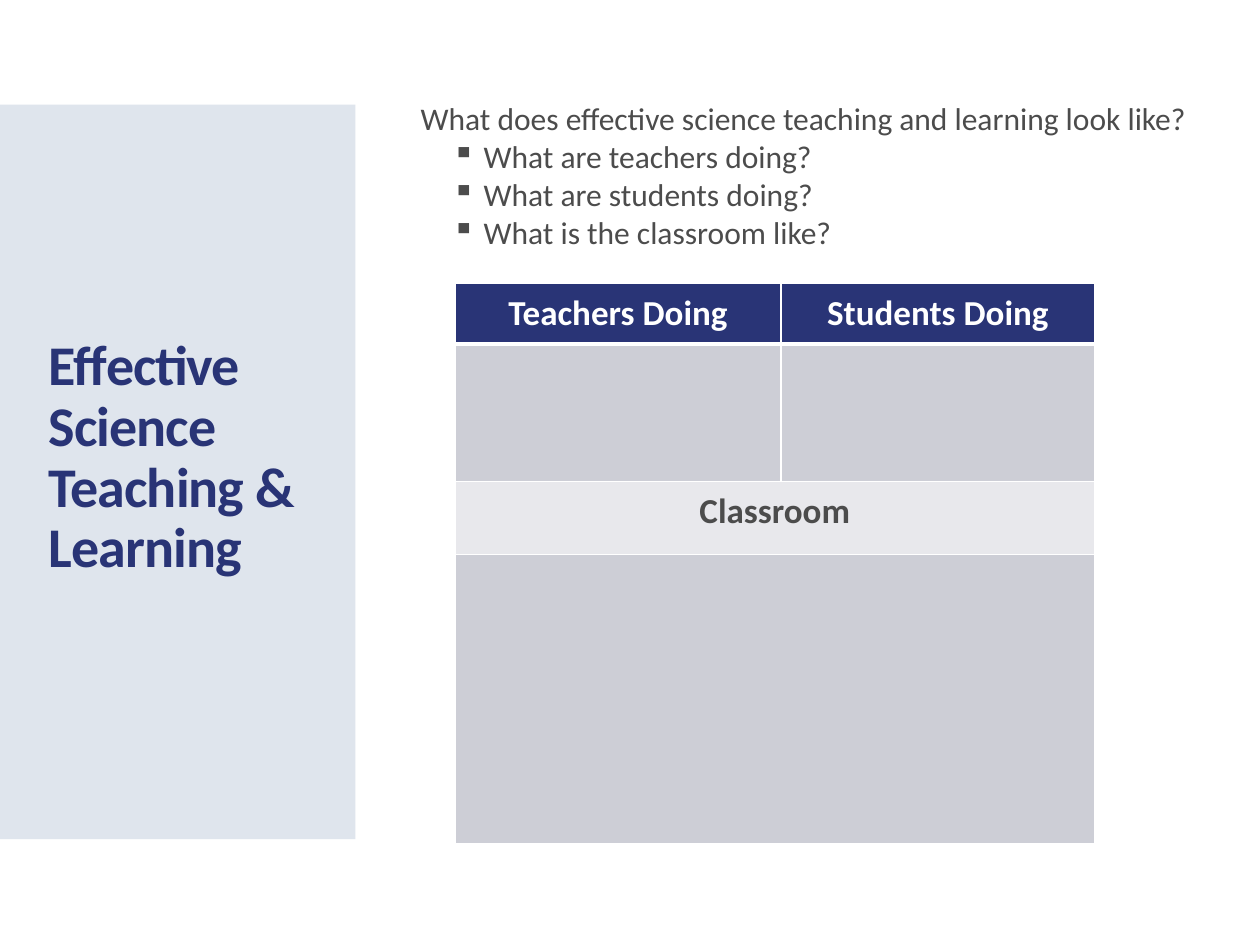
import pptx
import pptx.dml.color
import pptx.enum.shapes
import pptx.enum.text
import pptx.oxml
import pptx.oxml.ns
import pptx.util
from dataclasses import dataclass
from lxml import etree

Inches = pptx.util.Inches
Pt = pptx.util.Pt


@dataclass(frozen=True)
class Theme:
    font: str = "Calibri"
    navy: str = "293476"
    panel: str = "DFE5ED"
    dark_band: str = "CDCED6"
    light_band: str = "E8E8EC"
    ink: str = "4C4C4C"
    white: str = "FFFFFF"
    title_size: int = 32
    heading_size: int = 20
    body_size: int = 18


THEME = Theme()


def rgb(value):
    return pptx.dml.color.RGBColor.from_string(value)


def add_child(parent, tag, **attributes):
    return etree.SubElement(parent, pptx.oxml.ns.qn(tag), **attributes)


def format_runs(paragraph, size, color, bold=False):
    for run in paragraph.runs:
        run.font.name = THEME.font
        run.font.size = Pt(size)
        run.font.bold = bold
        run.font.color.rgb = rgb(color)


def add_title_panel(slide, left, top, width, height):
    panel = slide.shapes.add_shape(
        pptx.enum.shapes.MSO_SHAPE.RECTANGLE,
        Inches(left), Inches(top), Inches(width), Inches(height))
    panel.shadow.inherit = False
    panel.fill.solid()
    panel.fill.fore_color.rgb = rgb(THEME.panel)
    panel.line.fill.background()

    title = slide.shapes.add_textbox(
        Inches(left + 0.29), Inches(top + 1.42), Inches(width - 0.49), Inches(2.4))
    frame = title.text_frame
    frame.word_wrap = True
    frame.vertical_anchor = pptx.enum.text.MSO_ANCHOR.BOTTOM
    frame.text = "Effective Science Teaching & Learning"
    heading = frame.paragraphs[0]
    heading.line_spacing = 0.9
    format_runs(heading, THEME.title_size, THEME.navy, bold=True)
    for run in heading.runs:
        run.font._element.set("spc", "-60")


def add_questions(slide, left, top, width, height):
    box = slide.shapes.add_textbox(
        Inches(left), Inches(top), Inches(width), Inches(height))
    frame = box.text_frame
    frame.word_wrap = True
    frame.text = "\n".join([
        "What does effective science teaching and learning look like?",
        "What are teachers doing?",
        "What are students doing?",
        "What is the classroom like?",
    ])
    for question in frame.paragraphs[1:]:
        question.level = 1
        properties = question._p.get_or_add_pPr()
        properties.set("marL", str(Inches(0.5)))
        properties.set("indent", str(-Inches(0.25)))
        add_child(properties, "a:buChar", char="▪")
    for paragraph in frame.paragraphs:
        format_runs(paragraph, THEME.body_size, THEME.ink)


def set_borders(cell, bottom_width):
    properties = cell._tc.get_or_add_tcPr()
    for side in ("L", "R", "T", "B"):
        width = bottom_width if side == "B" else 1
        border = add_child(properties, f"a:ln{side}", w=str(Pt(width)))
        fill = add_child(border, "a:solidFill")
        add_child(fill, "a:srgbClr", val=THEME.white)


def add_observation_table(slide, left, top, width, height):
    column_widths = (2.59, 2.49)
    rows = (
        (0.48, THEME.navy, THEME.white, ("Teachers Doing", "Students Doing")),
        (1.09, THEME.dark_band, THEME.ink, ("", "")),
        (0.58, THEME.light_band, THEME.ink, ("Classroom",)),
        (2.3, THEME.dark_band, THEME.ink, ("",)),
    )
    table = slide.shapes.add_table(
        len(rows), len(column_widths),
        Inches(left), Inches(top), Inches(width), Inches(height)).table
    for column, column_width in zip(table.columns, column_widths):
        column.width = Inches(column_width)

    for index, (row_height, fill, ink, labels) in enumerate(rows):
        table.rows[index].height = Inches(row_height)
        if len(labels) == 1:
            table.cell(index, 0).merge(table.cell(index, 1))
        for position in range(len(column_widths)):
            cell = table.cell(index, position)
            set_borders(cell, bottom_width=3 if index == 0 else 1)
            cell.fill.solid()
            cell.fill.fore_color.rgb = rgb(fill)
        for position, label in enumerate(labels):
            cell = table.cell(index, position)
            cell.margin_left = cell.margin_right = Inches(0.14)
            cell.margin_top = cell.margin_bottom = Inches(0.07)
            cell.text_frame.text = label
            heading = cell.text_frame.paragraphs[0]
            heading.alignment = pptx.enum.text.PP_ALIGN.CENTER
            format_runs(heading, THEME.heading_size, ink, bold=True)


def main():
    deck = pptx.Presentation()
    deck.slide_width = Inches(10)
    deck.slide_height = Inches(7.5)
    slide = deck.slides.add_slide(deck.slide_layouts[6])
    add_title_panel(slide, 0, 0.83, 2.82, 5.83)
    add_observation_table(slide, 3.61, 2.25, 5.08, 4.45)
    add_questions(slide, 3.24, 0.74, 6.35, 1.31)
    deck.save("out.pptx")


if __name__ == "__main__":
    main()
